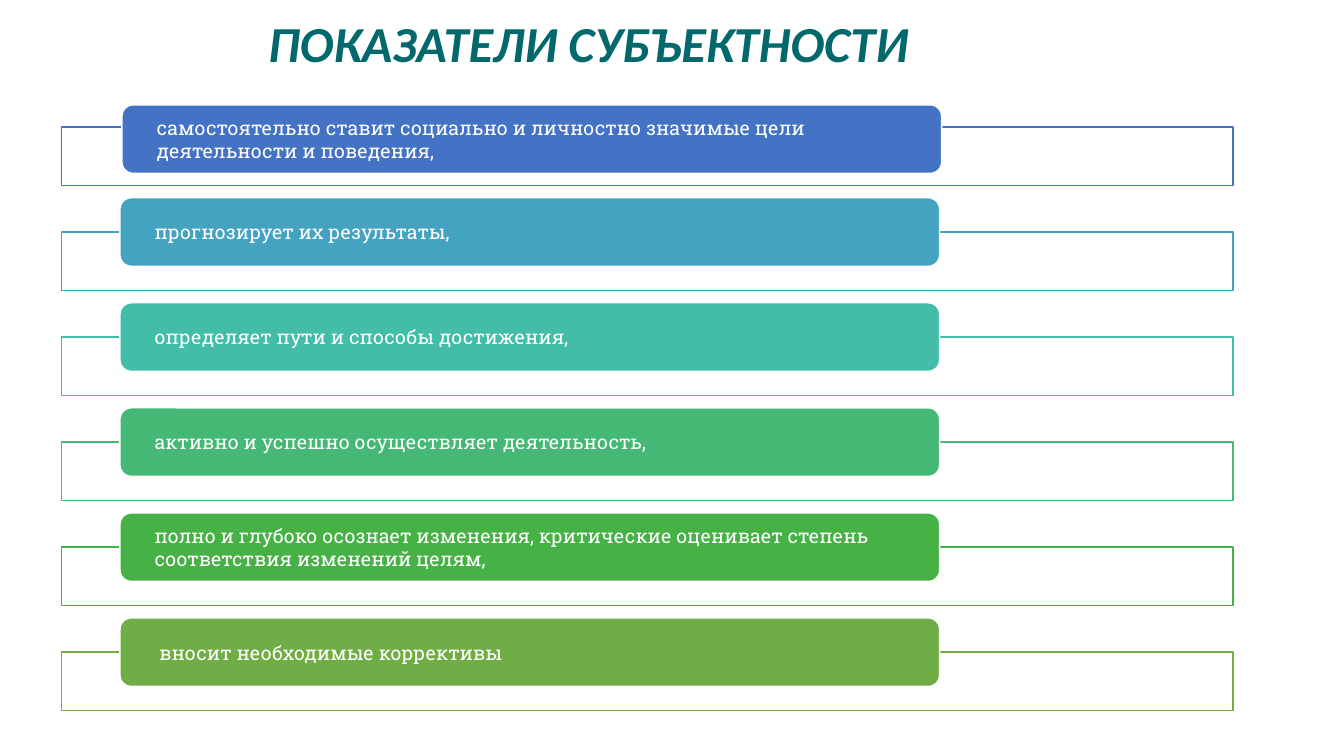
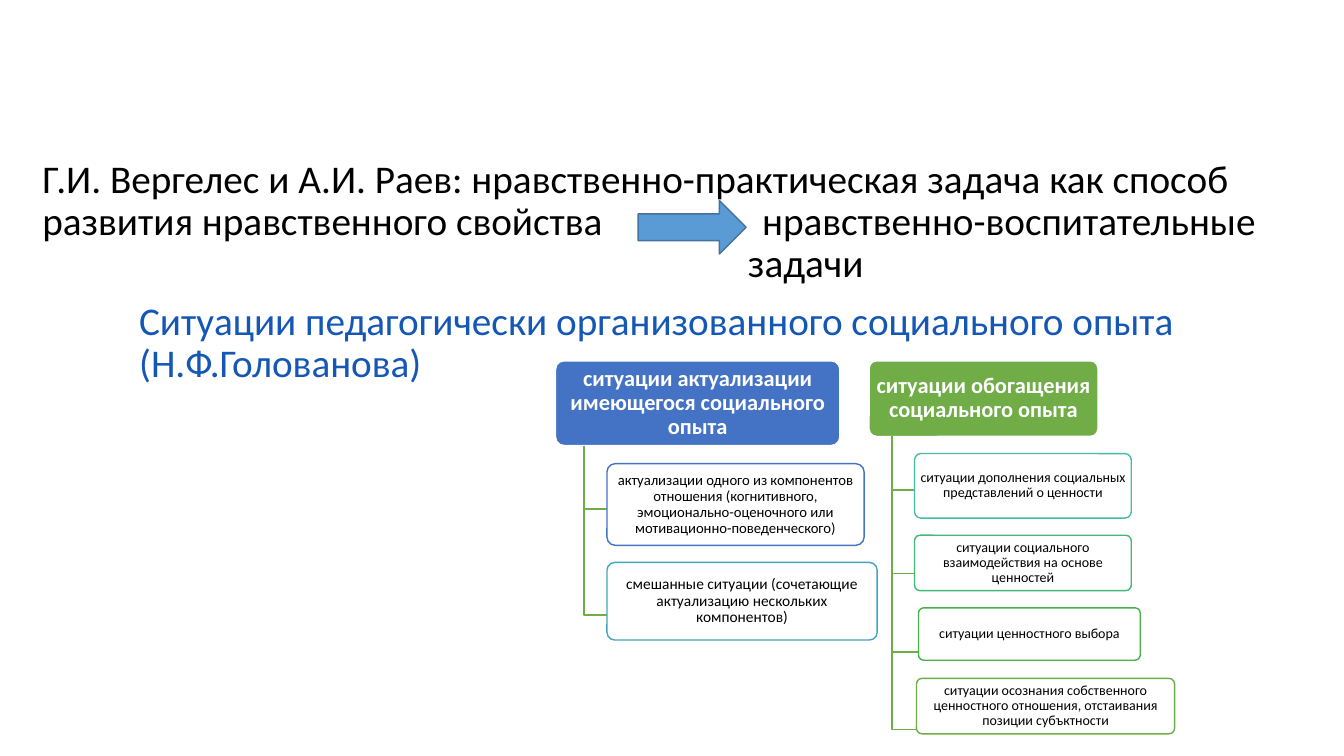
"""Builds two slides on indicators of subjectness and situations of social experience."""
from lxml.etree import SubElement
from pptx import Presentation
from pptx.dml.color import RGBColor
from pptx.enum.shapes import MSO_SHAPE as Shape
from pptx.enum.text import MSO_ANCHOR as Anchor, MSO_AUTO_SIZE as AutoSize, PP_ALIGN as Align
from pptx.oxml.ns import qn
from pptx.util import Inches, Pt

WHITE = RGBColor(0xFF, 0xFF, 0xFF)
BLACK = RGBColor(0x00, 0x00, 0x00)
TEAL = RGBColor(0x01, 0x69, 0x6C)
HEADING_BLUE = RGBColor(0x15, 0x57, 0xB5)
ARROW_FILL = RGBColor(0x5B, 0x9B, 0xD5)
ARROW_LINE = RGBColor(0x43, 0x73, 0x9E)
BLUE = RGBColor(0x44, 0x72, 0xC4)
CYAN = RGBColor(0x44, 0xA3, 0xC0)
TURQUOISE = RGBColor(0x43, 0xBD, 0xA7)
MINT = RGBColor(0x44, 0xB8, 0x74)
GREEN = RGBColor(0x46, 0xB2, 0x46)
OLIVE = RGBColor(0x70, 0xAD, 0x47)
SANS, SLAB = "Calibri", "Roboto Slab"

INDICATORS_TITLE = "ПОКАЗАТЕЛИ СУБЪЕКТНОСТИ"
INDICATORS = [
    ("самостоятельно ставит социально и личностно значимые цели деятельности и поведения,", BLUE, (0.02, 0.12)),
    ("прогнозирует их результаты,", CYAN, (0, 0)),
    ("определяет пути и способы достижения,", TURQUOISE, (0, 0)),
    ("активно и успешно осуществляет деятельность,", MINT, (0, 0)),
    ("полно и глубоко осознает изменения, критические оценивает степень соответствия изменений целям,",
     GREEN, (0, 0)),
    (" вносит необходимые коррективы", OLIVE, (0, 0)),
]
FIRST_FRAME, LAST_FRAME, PILL_RISE = 1.26, 6.47, 0.34

PRACTICAL_TASK = ("Г.И. Вергелес и А.И. Раев: нравственно-практическая задача как способ развития "
                  "нравственного свойства")
EDUCATIONAL_TASKS = "нравственно-воспитательные задачи"
SITUATIONS_TITLE = "Ситуации педагогически организованного социального опыта (Н.Ф.Голованова)"
SITUATIONS = [
    ("ситуации актуализации имеющегося социального опыта", BLUE, (5.51, 3.58, 2.82, 0.84), [
        ("актуализации одного из компонентов отношения (когнитивного, эмоционально-оценочного "
         "или мотивационно-поведенческого)", BLUE, (6.02, 4.6, 2.55, 0.81), 10.5, 5.05),
        ("смешанные ситуации (сочетающие актуализацию нескольких компонентов)",
         CYAN, (6.02, 5.58, 2.68, 0.77), 11, 6.1),
    ]),
    ("ситуации обогащения социального опыта", OLIVE, (8.62, 3.58, 2.27, 0.75), [
        ("ситуации дополнения социальных представлений о ценности",
         TURQUOISE, (9.07, 4.5, 2.15, 0.64), 10, 4.86),
        ("ситуации социального взаимодействия на основе ценностей",
         MINT, (9.07, 5.31, 2.15, 0.55), 10, 5.69),
        ("ситуации ценностного выбора", GREEN, (9.11, 6.03, 2.2, 0.52), 10, 6.47),
        ("ситуации осознания собственного ценностного отношения, отстаивания позиции субъктности",
         OLIVE, (9.09, 6.73, 2.56, 0.55), 10, 7.24),
    ]),
]


def write(shape, text, size, color, font=SANS, align=Align.LEFT, spacing=0.9, bold=False, italic=False):
    """Puts one formatted paragraph into a shape."""
    frame = shape.text_frame
    frame.text = text
    frame.word_wrap = True
    frame.auto_size = AutoSize.NONE
    paragraph = frame.paragraphs[0]
    paragraph.alignment = align
    paragraph.line_spacing = spacing
    paragraph.space_before = Pt(0)
    for run in paragraph.runs:
        run.font.name, run.font.size = font, Pt(size)
        run.font.bold, run.font.italic = bold, italic
        run.font.color.rgb = color
    return paragraph


def indent_first_line(paragraph, indent):
    """Removes the bullet and sets the indent of the first line."""
    properties = paragraph._p.get_or_add_pPr()
    properties.set("marL", "0")
    properties.set("indent", str(Inches(indent)))
    SubElement(properties, qn("a:buNone"))


def place(holder, box):
    """Moves a placeholder and anchors its text at the top."""
    holder.left, holder.top, holder.width, holder.height = map(Inches, box)
    holder.text_frame.vertical_anchor = Anchor.TOP


def add_block(slide, preset, box, fill, line):
    """Adds a filled and outlined shape without a shadow."""
    block = slide.shapes.add_shape(preset, *map(Inches, box))
    block.shadow.inherit = False
    block.fill.solid()
    block.fill.fore_color.rgb = fill
    block.line.color.rgb = line
    block.line.width = Pt(1)
    return block


def pad(block, side, vertical):
    """Sets the text margins of a block and centres its text vertically."""
    frame = block.text_frame
    frame.margin_left = frame.margin_right = Inches(side)
    frame.margin_top = frame.margin_bottom = Inches(vertical)
    frame.vertical_anchor = Anchor.MIDDLE


def add_node(slide, text, box, fill, line, size, color, bold=False):
    """Adds a rounded node of the situation tree."""
    node = add_block(slide, Shape.ROUNDED_RECTANGLE, box, fill, line)
    node.adjustments[0] = 0.1
    pad(node, 0.02, 0.02)
    write(node, text, size, color, align=Align.CENTER, bold=bold)


def add_branch(slide, x, top, bottom, right):
    """Adds an open elbow from a parent node to a child node."""
    builder = slide.shapes.build_freeform(Inches(x), Inches(top))
    builder.add_line_segments([(Inches(x), Inches(bottom)), (Inches(right), Inches(bottom))], close=False)
    branch = builder.convert_to_shape()
    branch.shadow.inherit = False
    branch.fill.background()
    branch.line.color.rgb = OLIVE
    branch.line.width = Pt(1)


def build_indicators(deck):
    """Builds the list of indicators."""
    slide = deck.slides.add_slide(deck.slide_layouts[5])
    title = slide.shapes.title
    place(title, (2.54, 0.14, 8.74, 0.57))
    title.text_frame.margin_left = Inches(0.12)
    write(title, INDICATORS_TITLE, 36, TEAL, bold=True, italic=True)
    pitch = (LAST_FRAME - FIRST_FRAME) / (len(INDICATORS) - 1)
    for row, (text, color, (shift_x, shift_y)) in enumerate(INDICATORS):
        top = FIRST_FRAME + row * pitch
        add_block(slide, Shape.RECTANGLE, (0.61, top, 11.62, 0.58), WHITE, color)
        pill_box = (1.19 + shift_x, top - PILL_RISE + shift_y, 8.13, 0.68)
        pill = add_block(slide, Shape.ROUNDED_RECTANGLE, pill_box, color, WHITE)
        pad(pill, 0.31, 0)
        write(pill, text, 14, WHITE, SLAB, spacing=1.0)


def build_situations(deck):
    """Builds the tree of situations."""
    slide = deck.slides.add_slide(deck.slide_layouts[1])
    practical = slide.placeholders[1]
    place(practical, (0.32, 1.53, 12.42, 1.3))
    indent_first_line(write(practical, PRACTICAL_TASK, 28, BLACK), 0)
    educational = slide.shapes.add_textbox(*map(Inches, (7.32, 1.95, 5.42, 0.95)))
    indent_first_line(write(educational, EDUCATIONAL_TASKS, 28, BLACK), 0.14)

    place(slide.shapes.title, (1.28, 2.94, 11.7, 4.34))
    write(slide.shapes.title, SITUATIONS_TITLE, 28, HEADING_BLUE)
    add_block(slide, Shape.RIGHT_ARROW, (6.33, 1.99, 1.07, 0.53), ARROW_FILL, ARROW_LINE)

    for heading, color, box, children in SITUATIONS:
        left, top, width, height = box
        add_node(slide, heading, box, color, WHITE, 16, WHITE, bold=True)
        for text, outline, child_box, size, branch_y in children:
            add_branch(slide, left + width / 10, top + height, branch_y, child_box[0])
            add_node(slide, text, child_box, WHITE, outline, size, BLACK)


def main():
    """Builds and saves the presentation."""
    deck = Presentation()
    deck.slide_width, deck.slide_height = Inches(13.33), Inches(7.5)
    build_indicators(deck)
    build_situations(deck)
    deck.save("out.pptx")


if __name__ == "__main__":
    main()
